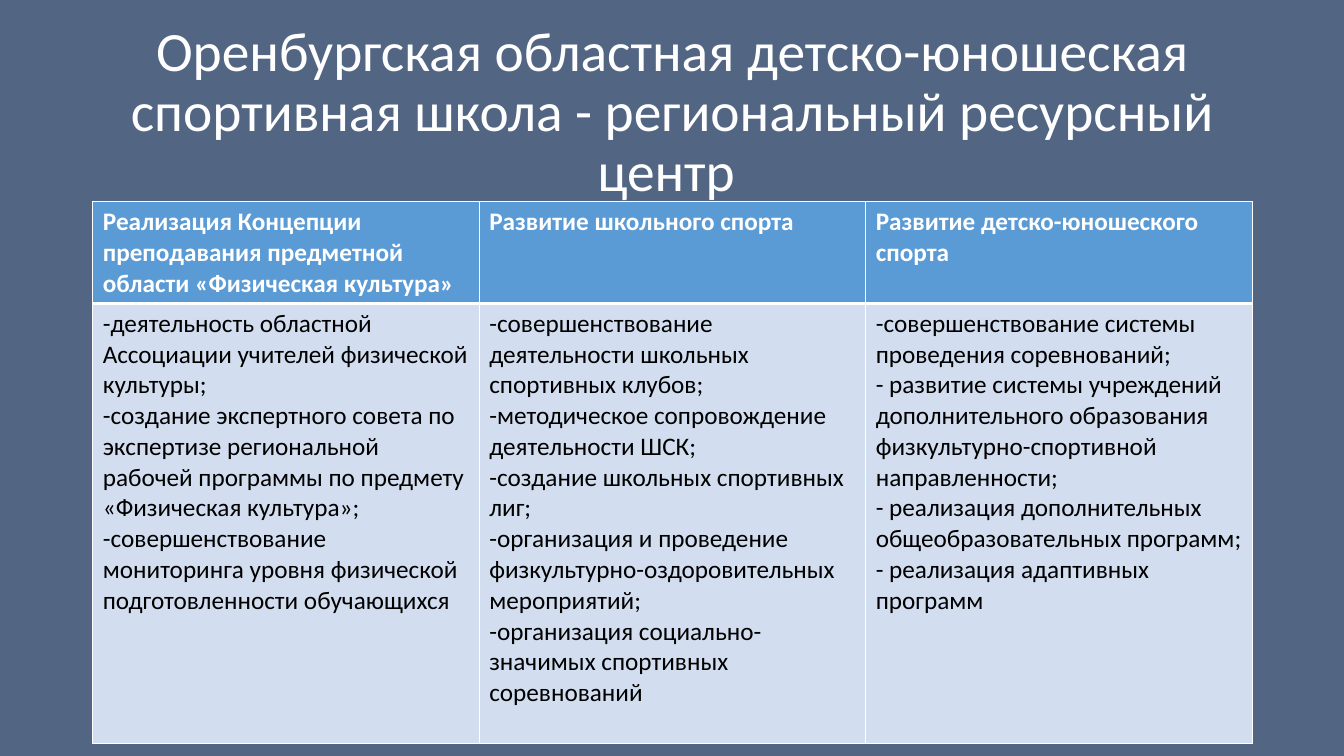
from lxml.etree import SubElement
from pptx import Presentation
from pptx.dml.color import RGBColor
from pptx.enum.text import MSO_ANCHOR, PP_ALIGN
from pptx.oxml.ns import qn
from pptx.util import Emu, Pt

PX = 9144  # 100 px to the inch
WHITE, BLACK = "FFFFFF", "000000"
BACKGROUND, HEADER_FILL, BODY_FILL = "526582", "5B9BD5", "D2DEEF"

TITLE = "Оренбургская областная детско-юношеская спортивная школа - региональный ресурсный центр "
DIRECTIONS = [
    ("Реализация Концепции преподавания предметной области «Физическая культура»", [
        "-деятельность областной Ассоциации учителей физической культуры;",
        "-создание экспертного совета по экспертизе региональной рабочей программы "
        "по предмету «Физическая культура»;",
        "-совершенствование мониторинга уровня физической подготовленности обучающихся",
    ]),
    ("Развитие школьного спорта", [
        "-совершенствование деятельности школьных спортивных клубов;",
        "-методическое сопровождение деятельности ШСК;",
        "-создание школьных спортивных лиг;",
        "-организация и проведение физкультурно-оздоровительных мероприятий;",
        "-организация социально-значимых спортивных соревнований",
    ]),
    ("Развитие детско-юношеского спорта", [
        "-совершенствование системы проведения соревнований;",
        "- развитие системы учреждений дополнительного образования "
        "физкультурно-спортивной направленности;",
        "- реализация дополнительных общеобразовательных программ;",
        "- реализация адаптивных программ",
    ]),
]


def px(n):
    return Emu(n * PX)


def rgb(color):
    return RGBColor.from_string(color)


def write(tf, lines, size=18, color=BLACK, bold=False, align=PP_ALIGN.LEFT, spacing=None):
    tf.word_wrap = True
    for i, line in enumerate(lines):
        p = tf.add_paragraph() if i else tf.paragraphs[0]
        p.alignment = align
        if spacing:
            p.line_spacing = spacing
        r = p.add_run()
        r.text = line
        r.font.name = "Calibri"
        r.font.size = Pt(size)
        r.font.bold = bold
        r.font.color.rgb = rgb(color)


def set_borders(cell, **widths):
    """Draw white borders; widths in points override the default of 1 by side."""
    tcPr = cell._tc.get_or_add_tcPr()
    for side in "LRTB":
        ln = SubElement(tcPr, qn(f"a:ln{side}"), w=str(Pt(widths.get(side, 1))))
        fill = SubElement(ln, qn("a:solidFill"))
        SubElement(fill, qn("a:srgbClr"), val=WHITE)


def fill_cell(cell, lines, fill, color, bold=False, **borders):
    set_borders(cell, **borders)
    cell.fill.solid()
    cell.fill.fore_color.rgb = rgb(fill)
    write(cell.text_frame, lines, color=color, bold=bold)


def add_title(s, x, y, w, h):
    tf = s.shapes.add_textbox(px(x), px(y), px(w), px(h)).text_frame
    tf.vertical_anchor = MSO_ANCHOR.MIDDLE
    write(tf, [TITLE], size=39.6, color=WHITE, align=PP_ALIGN.CENTER, spacing=0.9)


def add_directions_table(s, x, y, w, h, header_h=101):
    table = s.shapes.add_table(2, len(DIRECTIONS), px(x), px(y), px(w), px(h)).table
    table.rows[0].height = px(header_h)
    table.rows[1].height = px(h - header_h)
    for col, (heading, tasks) in enumerate(DIRECTIONS):
        fill_cell(table.cell(0, col), [heading], HEADER_FILL, WHITE, bold=True, B=3)
        fill_cell(table.cell(1, col), tasks, BODY_FILL, BLACK, T=3)


def main():
    prs = Presentation()
    prs.slide_width, prs.slide_height = px(1333), px(750)
    s = prs.slides.add_slide(prs.slide_layouts[6])
    s.background.fill.solid()
    s.background.fill.fore_color.rgb = rgb(BACKGROUND)
    add_title(s, 92, 40, 1150, 145)
    add_directions_table(s, 92, 200, 1150, 538)
    prs.save("out.pptx")


if __name__ == "__main__":
    main()
